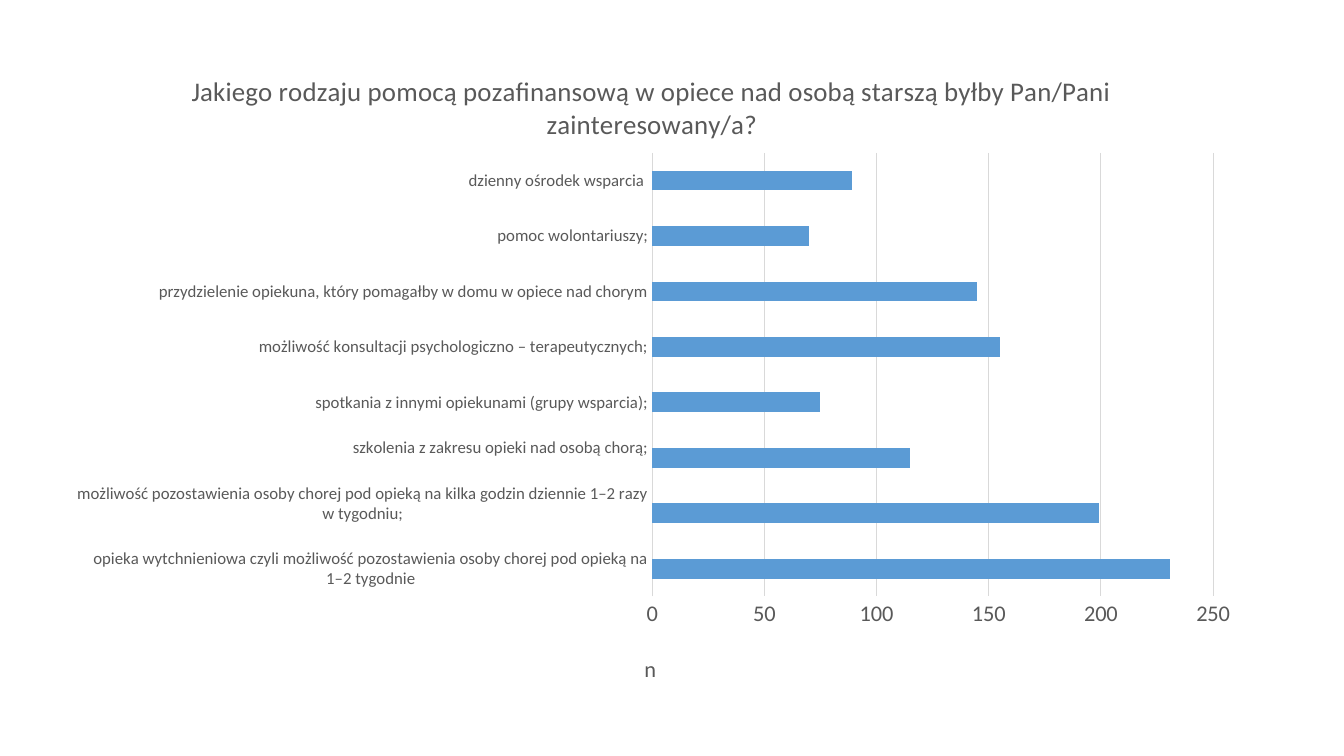
import pptx
import pptx.util
import pptx.chart.data
import pptx.dml.color
import pptx.enum.chart
import pptx.oxml

Pt = pptx.util.Pt
RGB = pptx.dml.color.RGBColor.from_string
xl = pptx.enum.chart

THEME = {
    "font": "Calibri", "text": "595959", "line": "D9D9D9", "bar": "5B9BD5",
    "title": 19.2, "axis": 16, "label": 12,
}


def add_text(tf, text, size, color=THEME["text"], bold=False):
    p = tf.paragraphs[0]
    r = p.add_run()
    r.text = text
    r.font.name, r.font.size, r.font.bold = THEME["font"], Pt(size), bold
    r.font.color.rgb = RGB(color)


def set_layout(parent, x, y, w=None, h=None):
    """Place a chart part by fractions of the chart's size."""
    for old in parent.findall(pptx.oxml.ns.qn("c:layout")):
        parent.remove(old)
    values = [("xMode", "edge"), ("yMode", "edge"), ("x", x), ("y", y)]
    if w:
        values = [("layoutTarget", "inner")] + values + [("w", w), ("h", h)]
    items = "".join(f'<c:{tag} val="{val}"/>' for tag, val in values)
    layout = pptx.oxml.parse_xml(
        f'<c:layout {pptx.oxml.ns.nsdecls("c")}>'
        f'<c:manualLayout>{items}</c:manualLayout></c:layout>')
    tx = parent.find(pptx.oxml.ns.qn("c:tx"))
    parent.insert(0 if tx is None else parent.index(tx) + 1, layout)


prs = pptx.Presentation()
prs.slide_width, prs.slide_height = Pt(960), Pt(540)
s = prs.slides.add_slide(prs.slide_layouts[6])

# Answers, from the bottom bar to the top one
answers = [
    ("opieka wytchnieniowa czyli możliwość pozostawienia osoby chorej pod opieką na\n1–2 tygodnie", 231),
    ("możliwość pozostawienia osoby chorej pod opieką na kilka godzin dziennie 1–2 razy\nw tygodniu;\n", 199),
    ("szkolenia z zakresu opieki nad osobą chorą;\n", 115),
    ("spotkania z innymi opiekunami (grupy wsparcia);", 75),
    ("możliwość konsultacji psychologiczno – terapeutycznych;", 155),
    ("przydzielenie opiekuna, który pomagałby w domu w opiece nad chorym", 145),
    ("pomoc wolontariuszy;", 70),
    ("dzienny ośrodek wsparcia ", 89),
]
data = pptx.chart.data.CategoryChartData()
data.categories = [label for label, n in answers]
data.add_series("n", [n for label, n in answers])

# Bar chart
chart = s.shapes.add_chart(
    xl.XL_CHART_TYPE.BAR_CLUSTERED,
    Pt(39.6), Pt(28.8), Pt(852.5), Pt(473), data).chart
chart.has_legend = False
chart.font.name, chart.font.size = THEME["font"], Pt(THEME["axis"])
plot = chart.plots[0]
plot.gap_width = 182
plot.vary_by_categories = False
fill = plot.series[0].format.fill
fill.solid()
fill.fore_color.rgb = RGB(THEME["bar"])
set_layout(chart.element.chart.plotArea, 0.5, 0.17, 0.47, 0.67)

# Chart title
chart.has_title = True
add_text(chart.chart_title.text_frame,
         "Jakiego rodzaju pomocą pozafinansową w opiece nad osobą starszą "
         "byłby Pan/Pani zainteresowany/a?", THEME["title"])
chart.chart_title.include_in_layout = False
set_layout(chart.chart_title.element if hasattr(chart.chart_title, "element")
           else chart.element.chart.title, 0.11, 0.04)

# Axes
value, category = chart.value_axis, chart.category_axis
for axis, size in ((value, THEME["axis"]), (category, THEME["label"])):
    axis.major_tick_mark = axis.minor_tick_mark = xl.XL_TICK_MARK.NONE
    font = axis.tick_labels.font
    font.name, font.size = THEME["font"], Pt(size)
    font.color.rgb = RGB(THEME["text"])
value.minimum_scale, value.maximum_scale, value.major_unit = 0, 250, 50
value.format.line.fill.background()
value.has_major_gridlines = True
category.has_major_gridlines = False
for line in (value.major_gridlines.format.line, category.format.line):
    line.width = Pt(0.75)
    line.color.rgb = RGB(THEME["line"])

# Value axis title
value.has_title = True
add_text(value.axis_title.text_frame, "n", THEME["axis"])
set_layout(chart.element.find(".//" + pptx.oxml.ns.qn("c:valAx")).title,
           0.49, 0.92)

prs.save("out.pptx")
